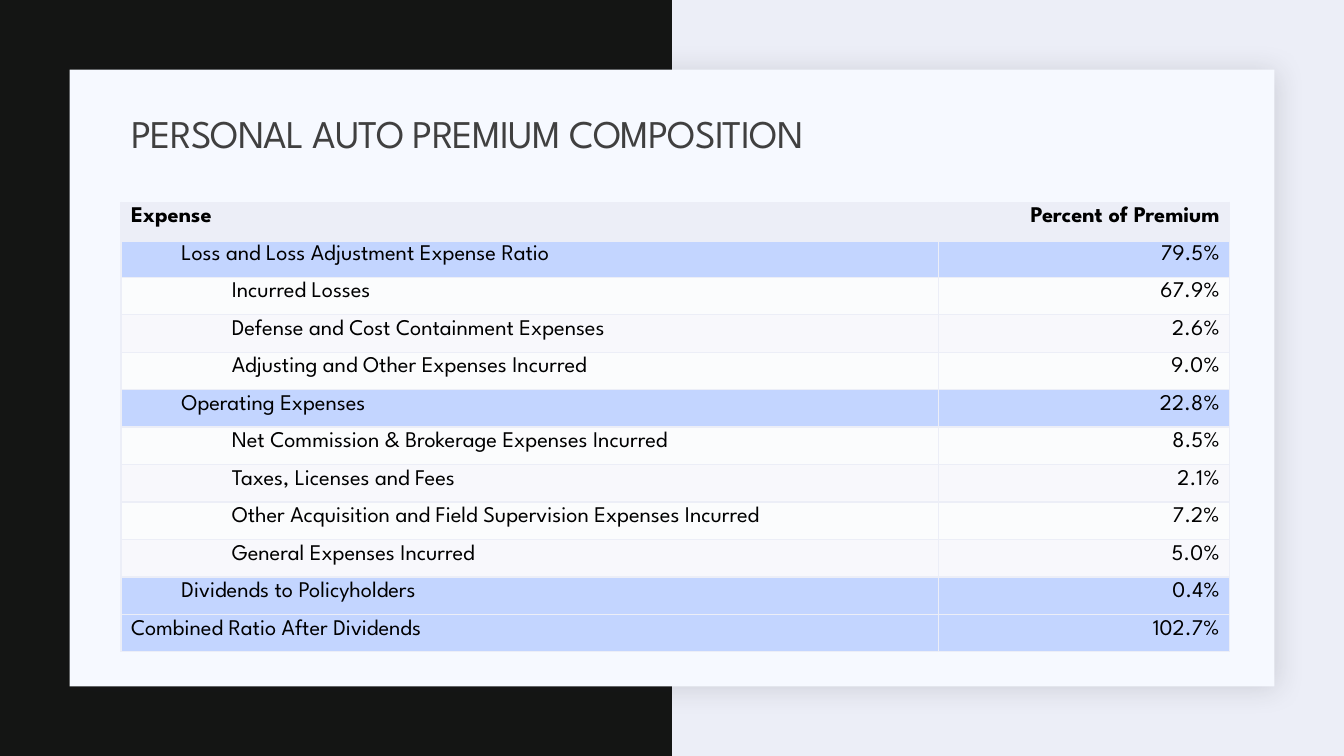
from lxml.etree import SubElement
from pptx import Presentation
from pptx.dml.color import RGBColor
from pptx.enum.shapes import MSO_SHAPE
from pptx.enum.text import MSO_ANCHOR, PP_ALIGN
from pptx.oxml import parse_xml
from pptx.oxml.ns import nsdecls, qn
from pptx.util import Pt

# Content: indent level, expense, percent of premium
TITLE = "PERSONAL AUTO PREMIUM COMPOSITION"
HEADER = ("Expense", "Percent of Premium")
EXPENSES = [
    (1, "Loss and Loss Adjustment Expense Ratio", "79.5%"),
    (2, "Incurred Losses", "67.9%"),
    (2, "Defense and Cost Containment Expenses", "2.6%"),
    (2, "Adjusting and Other Expenses Incurred", "9.0%"),
    (1, "Operating Expenses", "22.8%"),
    (2, "Net Commission & Brokerage Expenses Incurred", "8.5%"),
    (2, "Taxes, Licenses and Fees", "2.1%"),
    (2, "Other Acquisition and Field Supervision Expenses Incurred", "7.2%"),
    (2, "General Expenses Incurred", "5.0%"),
    (1, "Dividends to Policyholders", "0.4%"),
    (0, "Combined Ratio After Dividends", "102.7%"),
]

# Style
FONT = "League Spartan"
BLACK = RGBColor(0x00, 0x00, 0x00)
NIGHT = RGBColor(0x14, 0x15, 0x14)
SHADOW = RGBColor(0x1F, 0x21, 0x25)
TITLE_GREY = RGBColor(0x40, 0x40, 0x40)
MIST = RGBColor(0xEC, 0xEE, 0xF7)
CARD = RGBColor(0xF6, 0xF9, 0xFF)
SUBTOTAL = RGBColor(0xC3, 0xD5, 0xFF)
BANDS = (RGBColor(0xF8, 0xF8, 0xFC), RGBColor(0xFB, 0xFC, 0xFD))

# Layout, in points
PAGE_WIDTH, PAGE_HEIGHT = 960, 540
MARGIN = 49.7
LEFT = 86.4
COLUMN_WIDTHS = (583.9, 208.1)
TABLE_TOP, ROW_HEIGHT = 144.5, 26.78
INDENT = 36


def add_panel(page, left, top, width, height, color):
    panel = page.shapes.add_shape(
        MSO_SHAPE.RECTANGLE, Pt(left), Pt(top), Pt(width), Pt(height))
    panel.shadow.inherit = False
    panel.fill.solid()
    panel.fill.fore_color.rgb = color
    panel.line.fill.background()
    return panel


def add_soft_shadow(panel):
    effects = panel._element.spPr.find(qn("a:effectLst"))
    effects.append(parse_xml(
        f'<a:outerShdw {nsdecls("a")} blurRad="{Pt(20)}" dist="{Pt(2)}" '
        f'dir="2700000" algn="ctr" rotWithShape="0"><a:srgbClr val="{SHADOW}">'
        '<a:alpha val="15000"/></a:srgbClr></a:outerShdw>'))


def set_borders(cell, top, bottom):
    properties = cell._tc.get_or_add_tcPr()
    widths = {"lnL": 1, "lnR": 1, "lnT": top, "lnB": bottom}
    for position, (side, width) in enumerate(widths.items()):
        border = parse_xml(
            f'<a:{side} {nsdecls("a")} w="{Pt(width)}"><a:solidFill>'
            f'<a:srgbClr val="{MIST}"/></a:solidFill></a:{side}>')
        properties.insert(position, border)


def fill_cell(cell, text, color, bold, level=0, align=PP_ALIGN.LEFT):
    cell.fill.solid()
    cell.fill.fore_color.rgb = color
    para = cell.text_frame.paragraphs[0]
    para.text = text
    para.alignment = align
    para.level = level
    para._p.get_or_add_pPr().set("marL", str(Pt(INDENT * level)))
    para.font.name = FONT
    para.font.size = Pt(16)
    para.font.bold = bold
    para.font.color.rgb = BLACK


def add_expense_table(page):
    rows = [(0, *HEADER)] + EXPENSES
    table = page.shapes.add_table(
        len(rows), len(HEADER), Pt(LEFT), Pt(TABLE_TOP),
        Pt(sum(COLUMN_WIDTHS)), Pt(ROW_HEIGHT * len(rows))).table
    for column, width in zip(table.columns, COLUMN_WIDTHS):
        column.width = Pt(width)
    for number, (level, expense, percent) in enumerate(rows):
        table.rows[number].height = Pt(ROW_HEIGHT)
        is_header = number == 0
        if is_header:
            color = MIST
        elif level < 2:
            color = SUBTOTAL
        else:
            color = BANDS[(number + 1) % 2]
        name_cell, value_cell = table.cell(number, 0), table.cell(number, 1)
        fill_cell(name_cell, expense, color, is_header, level)
        fill_cell(value_cell, percent, color, is_header, align=PP_ALIGN.RIGHT)
        for cell in (name_cell, value_cell):
            set_borders(cell, 3 if number == 1 else 1, 3 if is_header else 1)


def format_title(title):
    title.left, title.top = Pt(LEFT), Pt(74.2)
    title.width, title.height = Pt(sum(COLUMN_WIDTHS)), Pt(46)
    title.text_frame.vertical_anchor = MSO_ANCHOR.MIDDLE
    para = title.text_frame.paragraphs[0]
    span = para.add_run()
    span.text = TITLE
    span._r.get_or_add_rPr().set("spc", "-50")
    para.alignment = PP_ALIGN.LEFT
    para.line_spacing = 0.9
    para.font.name = FONT
    para.font.size = Pt(28)
    para.font.color.rgb = TITLE_GREY


def main():
    deck = Presentation()
    deck.slide_width, deck.slide_height = Pt(PAGE_WIDTH), Pt(PAGE_HEIGHT)
    page = deck.slides.add_slide(deck.slide_layouts[5])
    page.background.fill.solid()
    page.background.fill.fore_color.rgb = MIST

    # Dark half and raised card
    add_panel(page, 0, 0, PAGE_WIDTH / 2, PAGE_HEIGHT, NIGHT)
    card = add_panel(page, MARGIN, MARGIN, PAGE_WIDTH - 2 * MARGIN,
                     PAGE_HEIGHT - 2 * MARGIN, CARD)
    add_soft_shadow(card)

    # Table, then the title in front of the card
    add_expense_table(page)
    title = page.shapes.title
    format_title(title)
    page.shapes._spTree.append(title._element)

    deck.save("out.pptx")


if __name__ == "__main__":
    main()
